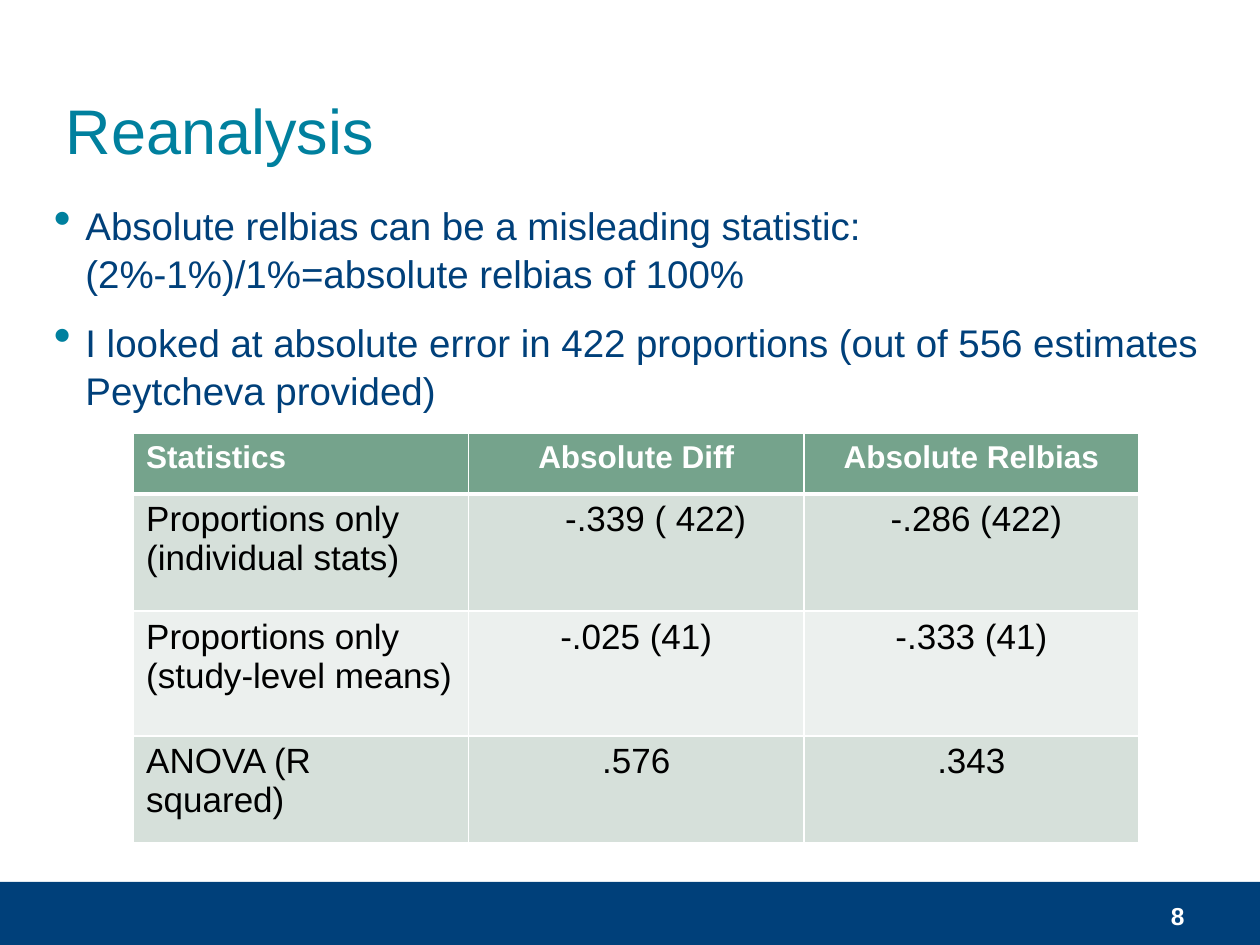
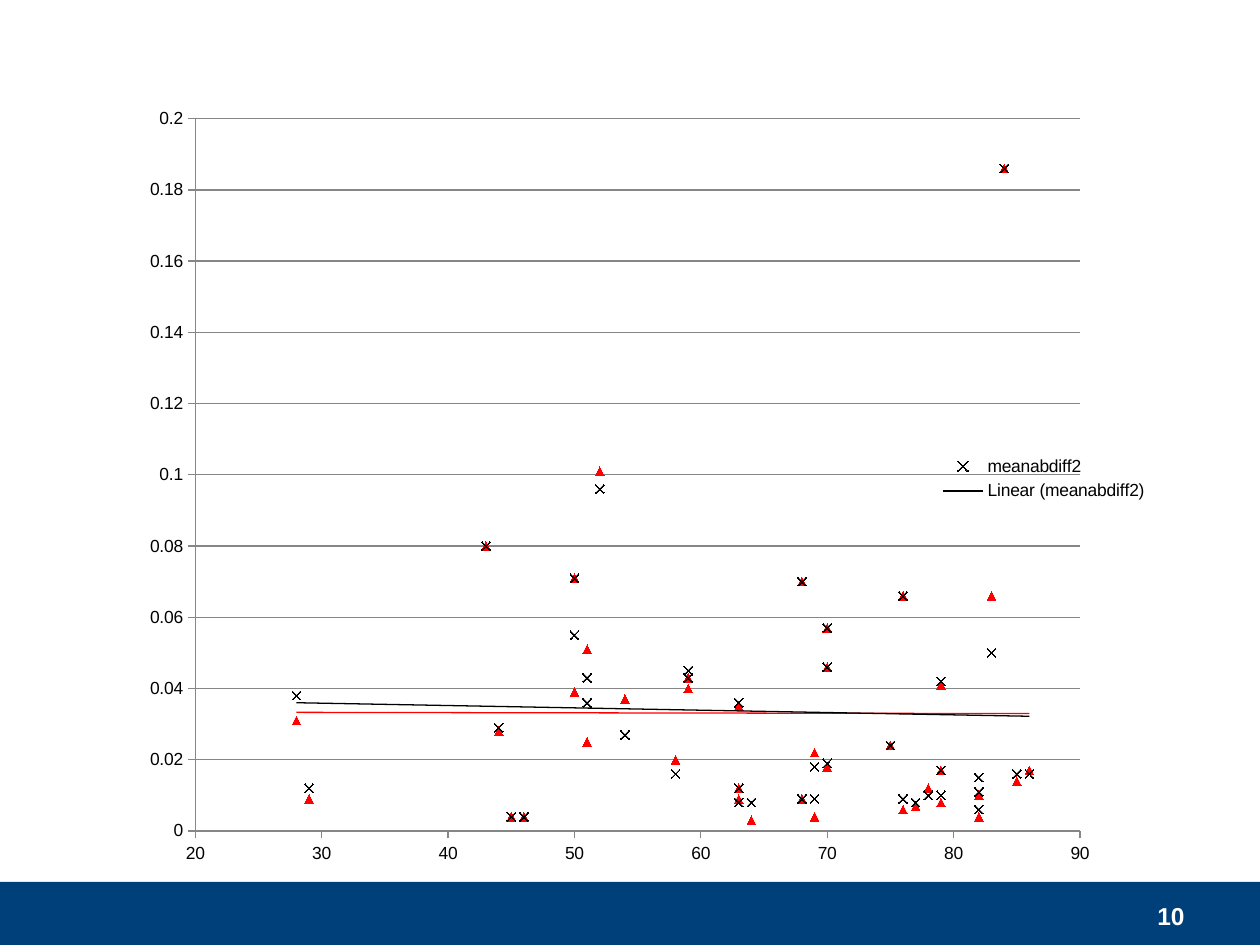
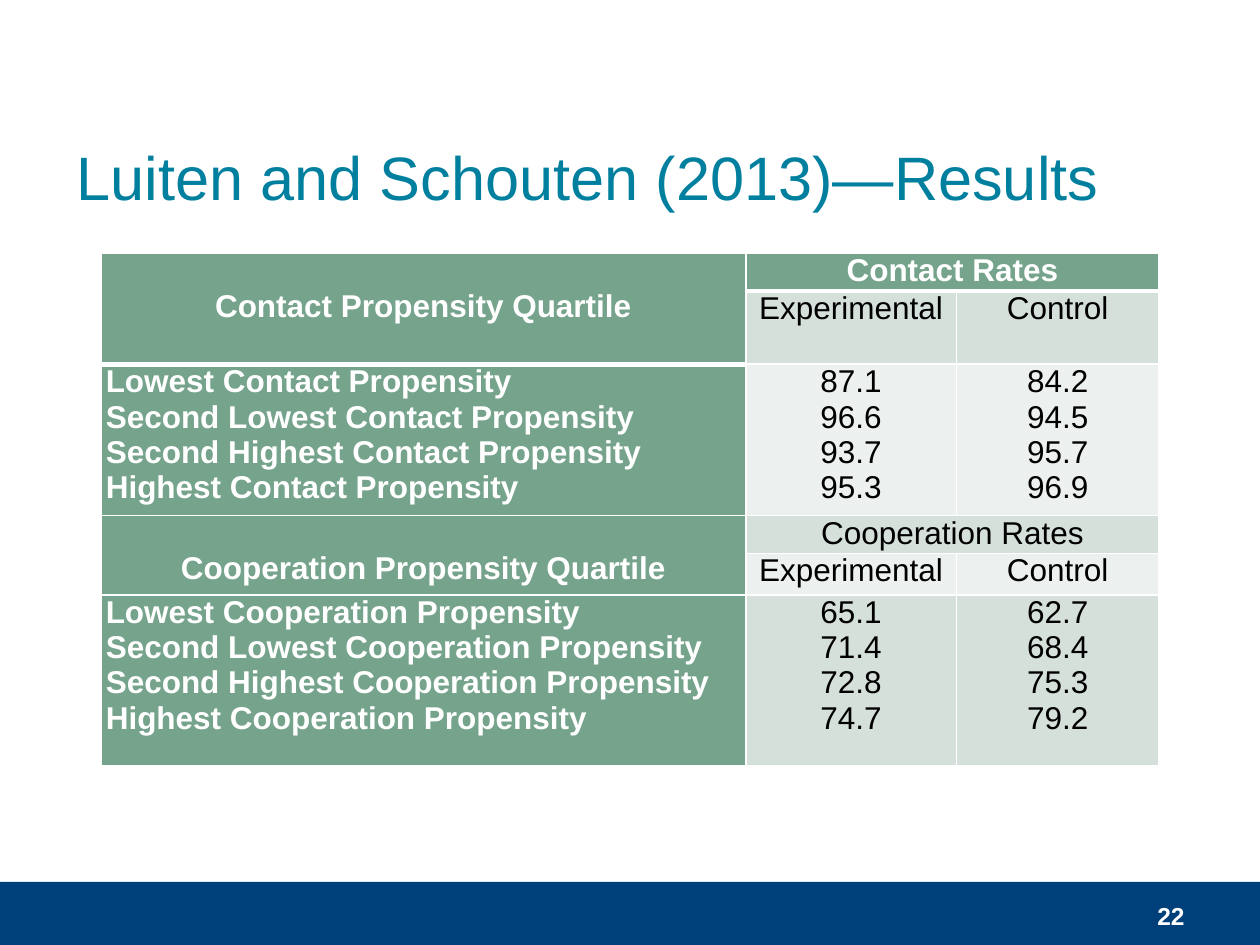
from dataclasses import dataclass
from typing import Optional

from pptx import Presentation, oxml
from pptx import util as u
from pptx.chart.data import XyChartData
from pptx.dml.color import RGBColor
from pptx.enum import chart as charts, shapes, text
from pptx.oxml.ns import nsdecls, qn

FONT = "Arial"
COLORS = {"navy": "00407A", "teal": "00809E", "white": "FFFFFF", "black": "000000", "red": "FF0000",
          "grid": "868686", "green": "75A38C", "dark band": "D6E0DA", "light band": "ECF0EE"}
LEFT, CENTER, RIGHT = text.PP_ALIGN.LEFT, text.PP_ALIGN.CENTER, text.PP_ALIGN.RIGHT

# The slide is a grid of 100 columns by 75 rows
SLIDE_WIDTH, SLIDE_HEIGHT = u.Inches(10), u.Inches(7.5)
COLUMN, ROW = SLIDE_WIDTH / 100, SLIDE_HEIGHT / 75


@dataclass(frozen=True)
class Box:
    left: float
    top: float
    width: float
    height: float

    def place(self) -> tuple[int, int, int, int]:
        return (round(self.left * COLUMN), round(self.top * ROW),
                round(self.width * COLUMN), round(self.height * ROW))


@dataclass(frozen=True)
class Cell:
    """A table cell; left_pad and top_pad are extra inches inside the margins."""
    lines: str
    fill: str
    align: int = CENTER
    rows: int = 1
    columns: int = 1
    left_pad: float = 0
    top_pad: float = 0
    size: int = 18
    heading: bool = False


@dataclass(frozen=True)
class Scatter:
    name: str
    values: list[float]
    marker: int
    color: str


def rgb(name: str) -> RGBColor:
    return RGBColor.from_string(COLORS[name])


def write(frame, lines: str, *, size: float, color: str, bold: bool = False, align: int = LEFT,
          spacing: Optional[float] = None, gap: float = 0, bullet: bool = False) -> None:
    """Fill a text frame, one paragraph for each line."""
    frame.word_wrap = True
    for index, line in enumerate(lines.split("\n")):
        paragraph = frame.add_paragraph() if index else frame.paragraphs[0]
        paragraph.alignment = align
        if spacing:
            paragraph.line_spacing = spacing
        if gap:
            paragraph.space_after = u.Pt(gap)
            if index:
                paragraph.space_before = u.Pt(gap)
        if bullet:
            add_bullet(paragraph)
        run = paragraph.add_run()
        run.text = line
        run.font.name, run.font.size, run.font.bold = FONT, u.Pt(size), bold
        run.font.color.rgb = rgb(color)


def add_bullet(paragraph) -> None:
    properties = paragraph._p.get_or_add_pPr()
    properties.set("marL", str(u.Inches(0.25)))
    properties.set("indent", str(u.Inches(-0.25)))
    for element in (f'<a:buClr {nsdecls("a")}><a:srgbClr val="{COLORS["teal"]}"/></a:buClr>',
                    f'<a:buSzPct {nsdecls("a")} val="130000"/>',
                    f'<a:buChar {nsdecls("a")} char="•"/>'):
        properties.append(oxml.parse_xml(element))


def add_text(slide, box: Box, lines: str, *, anchor: int = text.MSO_ANCHOR.TOP, **style) -> None:
    frame = slide.shapes.add_textbox(*box.place()).text_frame
    frame.vertical_anchor = anchor
    write(frame, lines, **style)


# Shared slide parts
def add_slide(presentation, number: int, title: str = "", title_box: Optional[Box] = None,
              title_size: float = 36):
    slide = presentation.slides.add_slide(presentation.slide_layouts[5 if title else 6])
    band = slide.shapes.add_shape(shapes.MSO_SHAPE.RECTANGLE, *Box(0, 70, 100, 5).place())
    band.shadow.inherit = False
    band.fill.solid()
    band.fill.fore_color.rgb = rgb("navy")
    band.line.color.rgb = rgb("navy")
    band.line.width = u.Pt(0.5)
    if title:
        placeholder = slide.shapes.title
        placeholder.left, placeholder.top, placeholder.width, placeholder.height = title_box.place()
        placeholder.text_frame.vertical_anchor = text.MSO_ANCHOR.MIDDLE
        write(placeholder.text_frame, title, size=title_size, color="teal", spacing=u.Pt(36))
    add_text(slide, Box(71.7, 70.7, 23.3, 4), str(number), anchor=text.MSO_ANCHOR.MIDDLE,
             size=14, color="white", bold=True, align=RIGHT)
    return slide


# Tables
def format_cell(cell, fill: str, heading: bool) -> None:
    edges = {"L": 1, "R": 1, "T": 1, "B": 3} if heading else {"L": 1, "R": 1, "B": 1}
    properties = cell._tc.get_or_add_tcPr()
    for edge, width in edges.items():
        properties.append(oxml.parse_xml(
            f'<a:ln{edge} {nsdecls("a")} w="{u.Pt(width)}"><a:solidFill>'
            f'<a:srgbClr val="{COLORS["white"]}"/></a:solidFill></a:ln{edge}>'))
    cell.fill.solid()
    cell.fill.fore_color.rgb = rgb(fill)


def add_table(slide, left: float, top: float, widths: list[float], heights: list[float],
              cells: list[list[Optional[Cell]]], side: float, edge: float) -> None:
    """Draw a table; side and edge are the cell margins in inches."""
    box = Box(left, top, sum(widths), sum(heights))
    table = slide.shapes.add_table(len(heights), len(widths), *box.place()).table
    table.first_row = table.horz_banding = False
    for column, width in zip(table.columns, widths):
        column.width = round(width * COLUMN)
    for row, height in zip(table.rows, heights):
        row.height = round(height * ROW)
    for row, items in enumerate(cells):
        for column, item in enumerate(items):
            if item is None:
                continue
            cell = table.cell(row, column)
            last_row, last_column = row + item.rows - 1, column + item.columns - 1
            for covered_row in range(row, last_row + 1):
                for covered_column in range(column, last_column + 1):
                    format_cell(table.cell(covered_row, covered_column), item.fill, item.heading)
            if item.rows * item.columns > 1:
                cell.merge(table.cell(last_row, last_column))
            cell.margin_left, cell.margin_right = u.Inches(side + item.left_pad), u.Inches(side)
            cell.margin_top, cell.margin_bottom = u.Inches(edge + item.top_pad), u.Inches(edge)
            strong = item.fill == "green"
            write(cell.text_frame, item.lines, size=item.size, bold=strong, align=item.align,
                  color="white" if strong else "black")


# Scatter chart
def manual_layout(left: float, top: float, width: float, height: float, inner: bool = False):
    target = '<c:layoutTarget val="inner"/>' if inner else ""
    return oxml.parse_xml(
        f'<c:layout {nsdecls("c")}><c:manualLayout>{target}'
        f'<c:xMode val="edge"/><c:yMode val="edge"/><c:x val="{left}"/><c:y val="{top}"/>'
        f'<c:w val="{width}"/><c:h val="{height}"/></c:manualLayout></c:layout>')


def add_trend(series, color: str) -> None:
    trend = oxml.parse_xml(
        f'<c:trendline {nsdecls("c", "a")}><c:spPr><a:ln w="{u.Pt(0.75)}"><a:solidFill>'
        f'<a:srgbClr val="{COLORS[color]}"/></a:solidFill></a:ln></c:spPr>'
        '<c:trendlineType val="linear"/><c:dispRSqr val="0"/><c:dispEq val="0"/></c:trendline>')
    series._element.find(qn("c:xVal")).addprevious(trend)


def format_axis(axis, low: float, high: float, step: float, grid: bool) -> None:
    axis.minimum_scale, axis.maximum_scale, axis.major_unit = low, high, step
    axis.major_tick_mark = charts.XL_TICK_MARK.OUTSIDE
    axis.minor_tick_mark = charts.XL_TICK_MARK.NONE
    axis.format.line.color.rgb = rgb("grid")
    axis.has_major_gridlines = grid
    if grid:
        axis.major_gridlines.format.line.color.rgb = rgb("grid")


def add_scatter(slide, box: Box, rates: list[int], groups: list[Scatter]) -> None:
    data = XyChartData()
    for group in groups:
        points = data.add_series(group.name)
        for rate, value in zip(rates, group.values):
            points.add_data_point(rate, value)
    chart = slide.shapes.add_chart(charts.XL_CHART_TYPE.XY_SCATTER, *box.place(), data).chart
    chart.has_title = False
    chart.font.name, chart.font.size = FONT, u.Pt(10)
    chart.font.color.rgb = rgb("black")
    plot = chart.plots[0]
    plot.vary_by_categories = False
    for series, group in zip(plot.series, groups):
        series.format.line.fill.background()
        series.marker.style, series.marker.size = group.marker, 5
        series.marker.format.fill.solid()
        series.marker.format.fill.fore_color.rgb = rgb(group.color)
        series.marker.format.line.color.rgb = rgb(group.color)
        add_trend(series, group.color)
    format_axis(chart.category_axis, 20, 90, 10, False)
    format_axis(chart.value_axis, 0, 0.2, 0.02, True)

    area = chart._chartSpace.chart.plotArea
    for layout in area.findall(qn("c:layout")):
        area.remove(layout)
    area.insert(0, manual_layout(0.04, 0.03, 0.88, 0.93, inner=True))

    # The legend names the first group only
    chart.has_legend = True
    legend = chart.legend
    legend.position = charts.XL_LEGEND_POSITION.RIGHT
    legend.include_in_layout = False
    position = legend._element.find(qn("c:legendPos"))
    position.addnext(manual_layout(0.8, 0.43, 0.13, 0.06))
    for index in (3, 2, 1):
        position.addnext(oxml.parse_xml(
            f'<c:legendEntry {nsdecls("c")}><c:idx val="{index}"/><c:delete val="1"/></c:legendEntry>'))


# Slide contents
def build_reanalysis(presentation) -> None:
    slide = add_slide(presentation, 8, "Reanalysis", Box(4.2, 6.2, 94.2, 9.2))
    add_text(slide, Box(3.3, 15.4, 93.3, 53.6),
             "Absolute relbias can be a misleading statistic: (2%-1%)/1%=absolute relbias of 100%\n"
             "I looked at absolute error in 422 proportions (out of 556 estimates Peytcheva provided)",
             size=22, color="navy", gap=6, spacing=1.04, bullet=True)
    headings = [Cell(name, "green", align, heading=True) for name, align in
                (("Statistics", LEFT), ("Absolute Diff", CENTER), ("Absolute Relbias", CENTER))]
    rows = [("Proportions only\n(individual stats)", "-.339 ( 422)", "-.286 (422)", 0.31, 0.08),
            ("Proportions only\n(study-level means)", "-.025 (41)", "-.333 (41)", 0, 0),
            ("ANOVA (R squared)", ".576", ".343", 0, 0)]
    body = []
    for index, (name, difference, relbias, *pads) in enumerate(rows):
        fill = "light band" if index % 2 else "dark band"
        body.append([Cell(name, fill, LEFT, size=20),
                     Cell(difference, fill, left_pad=pads[0], size=20),
                     Cell(relbias, fill, left_pad=pads[1], size=20)])
    add_table(slide, 10.6, 34.4, [26.6] * 3, [4.8, 9.3, 9.9, 8.5], [headings, *body], 0.1, 0.05)


def build_scatter(presentation) -> None:
    slide = add_slide(presentation, 10)
    rates = [79, 83, 86, 82, 45, 54, 44, 50, 76, 52, 59, 59, 79, 63, 58, 28, 75, 64, 29, 68, 70,
             82, 50, 76, 43, 78, 82, 63, 51, 79, 85, 68, 77, 69, 63, 46, 69, 51, 84, 70, 70]
    means = [0.017, 0.05, 0.016, 0.015, 0.004, 0.027, 0.029, 0.071, 0.066, 0.096, 0.043, 0.045,
             0.042, 0.012, 0.016, 0.038, 0.024, 0.008, 0.012, 0.009, 0.019, 0.011, 0.055, 0.009,
             0.08, 0.01, 0.006, 0.008, 0.036, 0.01, 0.016, 0.07, 0.008, 0.009, 0.036, 0.004,
             0.018, 0.043, 0.186, 0.046, 0.057]
    medians = [0.017, 0.066, 0.017, 0.01, 0.004, 0.037, 0.028, 0.071, 0.066, 0.101, 0.043, 0.04,
               0.041, 0.012, 0.02, 0.031, 0.024, 0.003, 0.009, 0.009, 0.018, 0.01, 0.039, 0.006,
               0.08, 0.012, 0.004, 0.009, 0.025, 0.008, 0.014, 0.07, 0.007, 0.004, 0.035, 0.004,
               0.022, 0.051, 0.186, 0.046, 0.057]
    add_scatter(slide, Box(11.9, 7.6, 80.2, 60.9), rates, [
        Scatter("meanabdiff2", means, charts.XL_MARKER_STYLE.X, "black"),
        Scatter("medadiff2", medians, charts.XL_MARKER_STYLE.TRIANGLE, "red")])


def rate_rows(topic: str, fills: tuple[str, str, str], heading: bool, experimental: str,
              control: str) -> list[list[Optional[Cell]]]:
    """Give the three table rows of one kind of rate."""
    levels = ("Lowest", "Second Lowest", "Second Highest", "Highest")
    names = "\n".join(f"{level} {topic} Propensity" for level in levels)
    top, middle, bottom = fills
    return [[Cell(f"{topic} Propensity Quartile", "green", rows=2, top_pad=0.28, heading=heading),
             Cell(f"{topic} Rates", top, columns=2, heading=heading), None],
            [None, Cell("Experimental", middle), Cell("Control", middle)],
            [Cell(names, "green", LEFT), Cell(experimental, bottom), Cell(control, bottom)]]


def build_results(presentation) -> None:
    slide = add_slide(presentation, 22, "Luiten and Schouten (2013)—Results",
                      Box(5.1, 8.5, 89.9, 11.7), title_size=35)
    contact = rate_rows("Contact", ("green", "dark band", "light band"), True,
                        "87.1\n96.6\n93.7\n95.3", "84.2\n94.5\n95.7\n96.9")
    cooperation = rate_rows("Cooperation", ("dark band", "light band", "dark band"), False,
                            "65.1\n71.4\n72.8\n74.7", "62.7\n68.4\n75.3\n79.2")
    add_table(slide, 8, 20.1, [51.2, 16.7, 16.1], [3, 5.6, 11.7, 2.8, 3.3, 13.6],
              contact + cooperation, 0.04, 0)


def main() -> None:
    presentation = Presentation()
    presentation.slide_width, presentation.slide_height = SLIDE_WIDTH, SLIDE_HEIGHT
    build_reanalysis(presentation)
    build_scatter(presentation)
    build_results(presentation)
    presentation.save("out.pptx")


if __name__ == "__main__":
    main()
